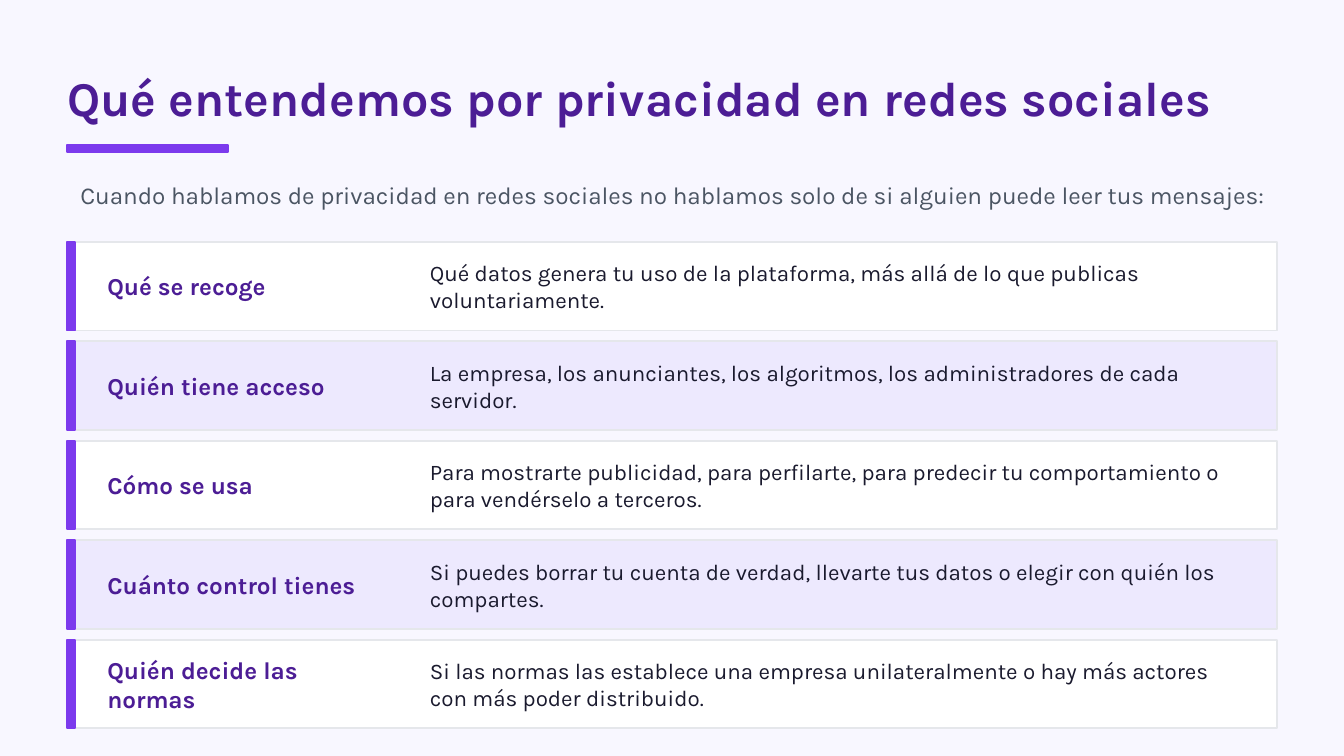
from pptx import Presentation
from pptx import util as u
from pptx.dml.color import RGBColor
from pptx.enum import shapes, text

BACKGROUND = RGBColor(0xF8, 0xF7, 0xFF)
PURPLE = RGBColor(0x4C, 0x1D, 0x95)
ACCENT = RGBColor(0x7C, 0x3A, 0xED)
LILAC = RGBColor(0xED, 0xE9, 0xFE)
WHITE = RGBColor(0xFF, 0xFF, 0xFF)
BORDER = RGBColor(0xE5, 0xE7, 0xEB)
GRAY = RGBColor(0x4B, 0x55, 0x63)
INK = RGBColor(0x1A, 0x1A, 0x2E)

TITLE = "Qué entendemos por privacidad en redes sociales"
INTRO = "Cuando hablamos de privacidad en redes sociales no hablamos solo de si alguien puede leer tus mensajes:"
ASPECTS = [
    ("Qué se recoge",
     "Qué datos genera tu uso de la plataforma, más allá de lo que publicas voluntariamente."),
    ("Quién tiene acceso",
     "La empresa, los anunciantes, los algoritmos, los administradores de cada servidor."),
    ("Cómo se usa",
     "Para mostrarte publicidad, para perfilarte, para predecir tu comportamiento o para vendérselo a terceros."),
    ("Cuánto control tienes",
     "Si puedes borrar tu cuenta de verdad, llevarte tus datos o elegir con quién los compartes."),
    ("Quién decide las normas",
     "Si las normas las establece una empresa unilateralmente o hay más actores con más poder distribuido."),
]

TITLE_FORMAT = {"size": u.Pt(26), "bold": True, "color": PURPLE}
INTRO_FORMAT = {"size": u.Pt(13), "bold": False, "color": GRAY}
LABEL_FORMAT = {"size": u.Pt(13), "bold": True, "color": PURPLE}
DETAIL_FORMAT = {"size": u.Pt(12), "bold": False, "color": INK}

SLIDE_WIDTH = u.Inches(10)
SLIDE_HEIGHT = SLIDE_WIDTH * 9 // 16
LEFT, WIDTH = 0.5, 9
ROW_TOP, ROW_HEIGHT, ROW_GAP = 1.8, 0.66, 0.08
TEXT_PADDING = 0.07


def add_bar(slide, box, fill, line):
    shape = slide.shapes.add_shape(shapes.MSO_SHAPE.RECTANGLE, *map(u.Inches, box))
    shape.shadow.inherit = False
    shape.fill.solid()
    shape.fill.fore_color.rgb = fill
    shape.line.color.rgb = line
    shape.line.width = u.Pt(1)


def add_text(slide, box, content, formats, margins=None):
    frame = slide.shapes.add_textbox(*map(u.Inches, box)).text_frame
    frame.word_wrap = True
    frame.vertical_anchor = text.MSO_ANCHOR.MIDDLE
    for name, value in (margins or {}).items():
        setattr(frame, name, value)
    paragraph = frame.paragraphs[0]
    run = paragraph.add_run()
    run.text = content
    run.font.name = "Karla"
    for name, value in formats.items():
        if name == "color":
            run.font.color.rgb = value
        else:
            setattr(run.font, name, value)


def main():
    presentation = Presentation()
    presentation.slide_width = SLIDE_WIDTH
    presentation.slide_height = SLIDE_HEIGHT
    slide = presentation.slides.add_slide(presentation.slide_layouts[6])
    slide.background.fill.solid()
    slide.background.fill.fore_color.rgb = BACKGROUND

    no_margins = {f"margin_{side}": 0 for side in ("left", "top", "right", "bottom")}
    add_text(slide, (LEFT, 0.4, WIDTH, 0.65), TITLE, TITLE_FORMAT, no_margins)
    add_bar(slide, (LEFT, 1.08, 1.2, 0.05), ACCENT, ACCENT)
    add_text(slide, (LEFT, 1.25, WIDTH, 0.4), INTRO, INTRO_FORMAT)

    for index, (label, detail) in enumerate(ASPECTS):
        top = ROW_TOP + index * (ROW_HEIGHT + ROW_GAP)
        text_top = top + TEXT_PADDING
        text_height = ROW_HEIGHT - 2 * TEXT_PADDING
        add_bar(slide, (LEFT, top, WIDTH, ROW_HEIGHT), LILAC if index % 2 else WHITE, BORDER)
        add_bar(slide, (LEFT, top, 0.06, ROW_HEIGHT), ACCENT, ACCENT)
        add_text(slide, (0.7, text_top, 2.2, text_height), label, LABEL_FORMAT)
        add_text(slide, (3.1, text_top, 6.2, text_height), detail, DETAIL_FORMAT)

    presentation.save("out.pptx")


if __name__ == "__main__":
    main()
